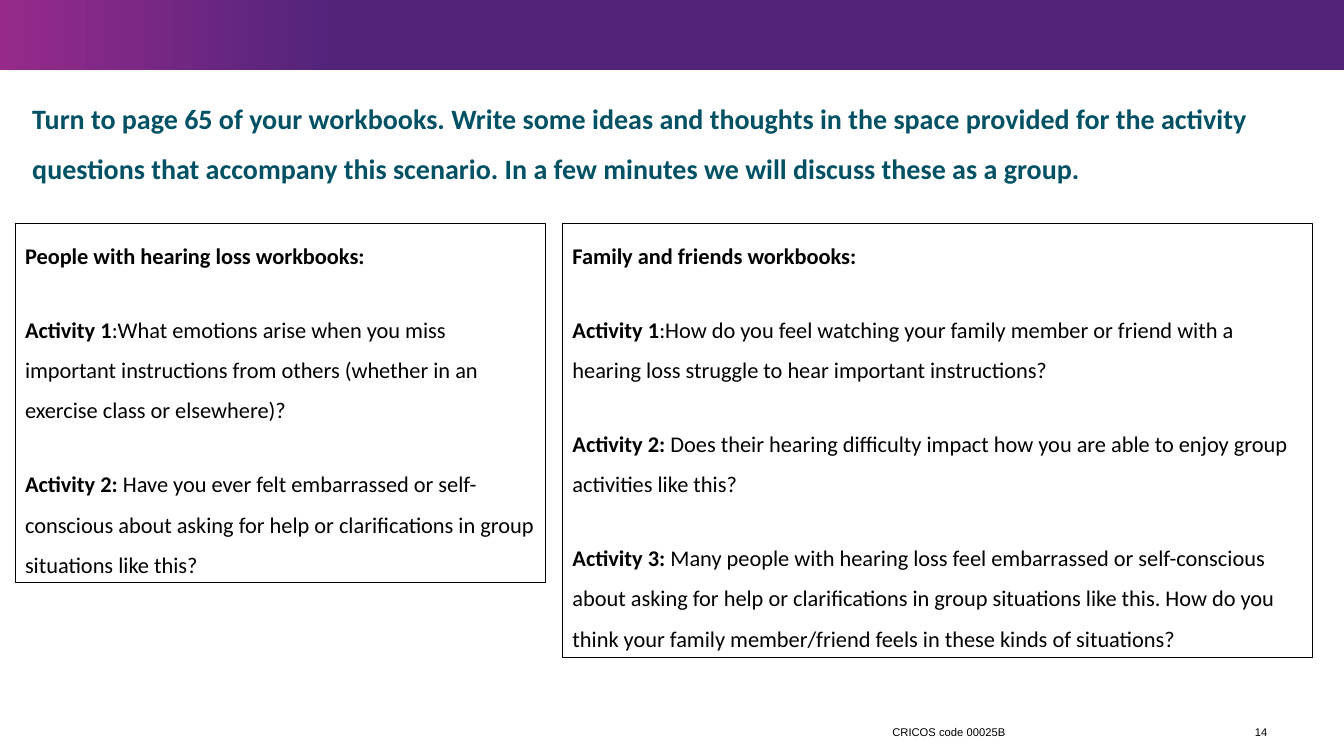
import pptx
import pptx.util
import pptx.dml.color
import pptx.enum.shapes
import pptx.enum.text

Inches, Pt = pptx.util.Inches, pptx.util.Pt
ALIGN = pptx.enum.text.PP_ALIGN
RECTANGLE = pptx.enum.shapes.MSO_SHAPE.RECTANGLE
COLOURS = {"magenta": "962A8B", "purple": "51247A", "teal": "005164", "black": "000000"}

deck = pptx.Presentation()
deck.slide_width, deck.slide_height = Inches(13.33), Inches(7.5)
slide = deck.slides.add_slide(deck.slide_layouts[6])


def rgb(name):
    return pptx.dml.color.RGBColor.from_string(COLOURS[name])


def add_text(left, top, width, height, paragraphs, size, font, colour="black",
             inset=(0, 0), spacing=None, align=ALIGN.LEFT,
             anchor=pptx.enum.text.MSO_ANCHOR.TOP):
    """Each paragraph is a pair: bold lead, then regular text."""
    box = slide.shapes.add_textbox(Inches(left), Inches(top), Inches(width), Inches(height))
    frame = box.text_frame
    frame.word_wrap = True
    frame.vertical_anchor = anchor
    frame.margin_left = frame.margin_right = Inches(inset[0])
    frame.margin_top = frame.margin_bottom = Inches(inset[1])
    for index, pair in enumerate(paragraphs):
        paragraph = frame.add_paragraph() if index else frame.paragraphs[0]
        paragraph.alignment = align
        if spacing:
            paragraph.line_spacing = spacing
            paragraph.space_before = Pt(12 if index else 0)
            paragraph.space_after = Pt(12)
        for bold, words in zip((True, False), pair):
            if words:
                run = paragraph.add_run()
                run.text = words
                run.font.size, run.font.name, run.font.bold = Pt(size), font, bold
                run.font.color.rgb = rgb(colour)
    return box


# Header band
band = slide.shapes.add_shape(RECTANGLE, 0, 0, deck.slide_width, Inches(0.69))
band.shadow.inherit = False
band.line.fill.background()
band.fill.gradient()
band.fill.gradient_angle = 0
for stop, (position, name) in zip(band.fill.gradient_stops, [(0, "magenta"), (0.25, "purple")]):
    stop.position = position
    stop.color.rgb = rgb(name)

# Instruction
instruction = ("Turn to page 65 of your workbooks. Write some ideas and thoughts in the space "
               "provided for the activity questions that accompany this scenario. In a few "
               "minutes we will discuss these as a group.")
add_text(0.32, 0.84, 12.53, 2.19, [(instruction, "")], 20, "Calibri", "teal", spacing=1.5)

# Workbook panels: left, width, height, paragraphs
workbooks = [
    (0.15, 5.26, 3.56, [
        ("People with hearing loss workbooks:", ""),
        ("Activity 1", ":What emotions arise when you miss important instructions from others "
                       "(whether in an exercise class or elsewhere)?"),
        ("Activity 2: ", "Have you ever felt embarrassed or self-conscious about asking for "
                         "help or clarifications in group situations like this?"),
    ]),
    (5.58, 7.44, 4.3, [
        ("Family and friends workbooks:", ""),
        ("Activity 1", ":How do you feel watching your family member or friend with a hearing "
                       "loss struggle to hear important instructions?"),
        ("Activity 2: ", "Does their hearing difficulty impact how you are able to enjoy group "
                         "activities like this?"),
        ("Activity 3:", " Many people with hearing loss feel embarrassed or self-conscious about "
                        "asking for help or clarifications in group situations like this. How do "
                        "you think your family member/friend feels in these kinds of situations?"),
    ]),
]
for left, width, height, activities in workbooks:
    panel = add_text(left, 2.22, width, height, activities, 16, "Calibri",
                     inset=(0.1, 0.05), spacing=1.5)
    panel.text_frame.auto_size = pptx.enum.text.MSO_AUTO_SIZE.SHAPE_TO_FIT_TEXT
    panel.line.color.rgb = rgb("black")
    panel.line.width = Pt(0.75)

# Footer: provider code and page number
for left, width, words, align in [(8.85, 2.62, "CRICOS code 00025B", ALIGN.LEFT),
                                  (12.26, 0.31, "14", ALIGN.RIGHT)]:
    add_text(left, 7.13, width, 0.26, [("", words)], 8, "Arial", align=align,
             anchor=pptx.enum.text.MSO_ANCHOR.MIDDLE)

deck.save("out.pptx")
